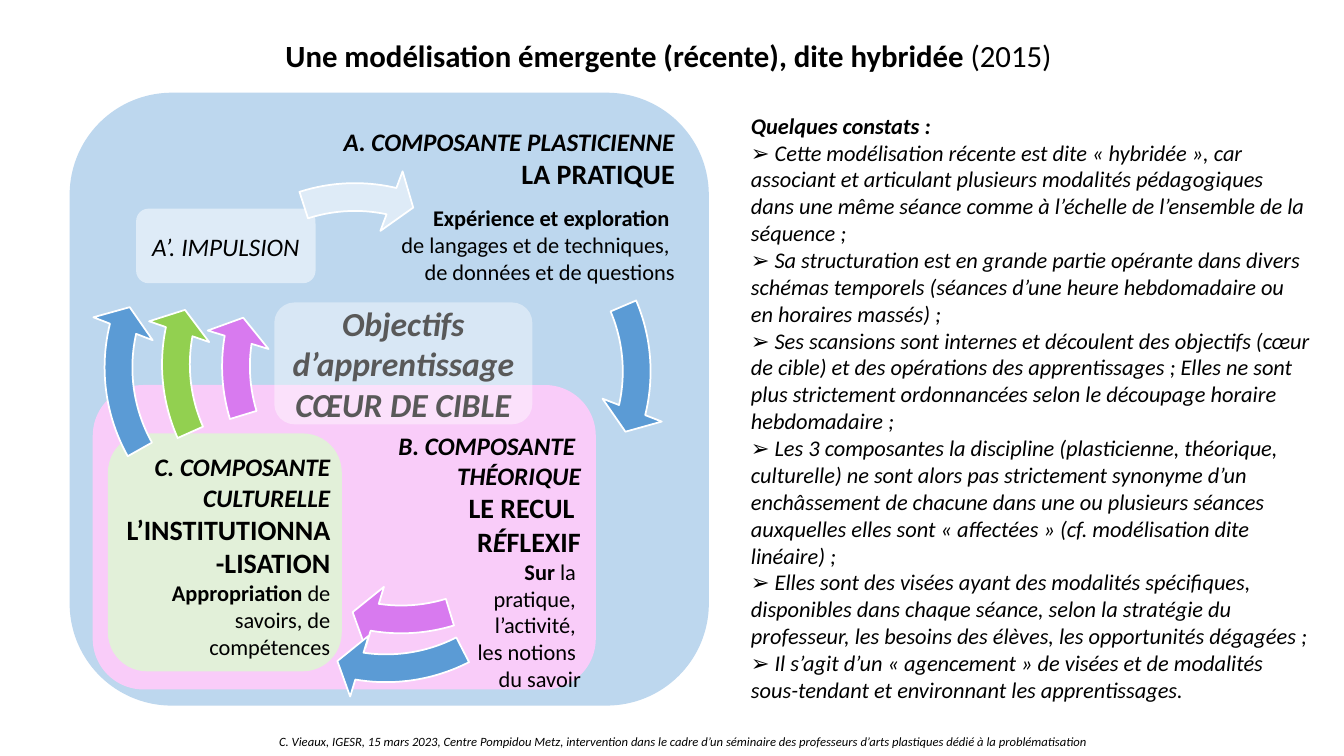
from lxml import etree
from pptx import Presentation
from pptx import util as u
from pptx.dml.color import RGBColor
from pptx.enum import shapes, text
from pptx.oxml import ns

W, H = u.Inches(13.33), u.Inches(7.5)
BLACK = RGBColor(0, 0, 0)
WHITE = RGBColor(255, 255, 255)
GREY = RGBColor(0x59, 0x59, 0x59)
SKY = RGBColor(0xBD, 0xD7, 0xEE)
PALE_BLUE = RGBColor(0xDE, 0xEB, 0xF7)
PALE_PINK = RGBColor(0xF9, 0xCC, 0xF9)
PALE_GREEN = RGBColor(0xE2, 0xF0, 0xD9)
BLUE = RGBColor(0x5B, 0x9B, 0xD5)
VIOLET = RGBColor(0xD8, 0x7A, 0xEF)
GREEN = RGBColor(0x92, 0xD0, 0x50)

RIGHT, CENTER, LEFT = text.PP_ALIGN.RIGHT, text.PP_ALIGN.CENTER, text.PP_ALIGN.LEFT
TOP, MIDDLE, BOTTOM = text.MSO_ANCHOR.TOP, text.MSO_ANCHOR.MIDDLE, text.MSO_ANCHOR.BOTTOM


def font(size, bold=False, italic=False):
    return {"name": "Calibri", "size": u.Pt(size), "bold": bold, "italic": italic}


COMPONENT = font(18, True, True)
ROLE = font(20, True)
KEY = font(16, True)
BODY = font(16)
NOTE = font(16, italic=True)
TARGET = font(24, True, True)

# Each line is a list of (text, format) runs.
PRACTICE = [
    [("A. COMPOSANTE PLASTICIENNE", COMPONENT)],
    [("LA PRATIQUE", ROLE)],
    [("Expérience et exploration ", KEY)],
    [("de langages et de techniques, ", BODY)],
    [("de données et de questions", BODY)],
]
THEORY = [
    [("B. COMPOSANTE ", COMPONENT)],
    [("THÉORIQUE", COMPONENT)],
    [("LE RECUL ", ROLE)],
    [("R", ROLE), ("É", font(20, True, True)), ("FLEXIF", ROLE)],
    [("Sur", KEY), (" la ", BODY)],
    [("pratique, ", BODY)],
    [("l’activité, ", BODY)],
    [("les notions ", BODY)],
    [("du savoir", BODY)],
]
CULTURE = [
    [("C. COMPOSANTE CULTURELLE", COMPONENT)],
    [("L’INSTITUTIONNA-LISATION", ROLE)],
    [("Appropriation ", KEY), ("de savoirs, de compétences", BODY)],
]
FINDINGS = [
    "Cette modélisation récente est dite « hybridée », car associant et articulant "
    "plusieurs modalités pédagogiques dans une même séance comme à l’échelle de "
    "l’ensemble de la séquence ;",
    "Sa structuration est en grande partie opérante dans divers schémas temporels "
    "(séances d’une heure hebdomadaire ou en horaires massés) ;",
    "Ses scansions sont internes et découlent des objectifs (cœur de cible) et des "
    "opérations des apprentissages ; Elles ne sont plus strictement ordonnancées "
    "selon le découpage horaire hebdomadaire ;",
    "Les 3 composantes la discipline (plasticienne, théorique, culturelle) ne sont "
    "alors pas strictement synonyme d’un enchâssement de chacune dans une ou "
    "plusieurs séances auxquelles elles sont « affectées » (cf. modélisation dite "
    "linéaire) ;",
    "Elles sont des visées ayant des modalités spécifiques, disponibles dans chaque "
    "séance, selon la stratégie du professeur, les besoins des élèves, les "
    "opportunités dégagées ;",
    "Il s’agit d’un « agencement » de visées et de modalités sous-tendant et "
    "environnant les apprentissages.",
]

# Left, top (in % of the slide), end and start of the arc, rotation, colour.
ARROWS_BELOW = [(20.18, 22.8, 8.05, 202.15, 0, BLUE)]
ARROWS_ABOVE = [
    (11.63, 21.87, 169.58, 151.32, 0, PALE_BLUE),
    (15.08, 33.47, 59.48, 43.86, 0, VIOLET),
    (13.95, 40, 8.05, 202.15, 85.8, BLUE),
    (10.73, 21.87, 114.78, 93.58, 0, GREEN),
    (6.45, 22.27, 8.05, 198.37, 180, BLUE),
    (15.23, 22.13, 59.48, 43.86, 90, VIOLET),
]


def area(left, top, width, height):
    """Turn percentages of the slide into lengths."""
    return [int(side * share / 100) for side, share in zip((W, H, W, H), (left, top, width, height))]


def write(s, lines, align=LEFT, anchor=TOP, color=BLACK, margins=(0.1, 0.05, 0.1, 0.05)):
    tf = s.text_frame
    tf.word_wrap = True
    tf.auto_size = text.MSO_AUTO_SIZE.NONE
    tf.vertical_anchor = anchor
    for side, inset in zip(("left", "top", "right", "bottom"), margins):
        setattr(tf, f"margin_{side}", u.Inches(inset))
    for i, runs in enumerate(lines):
        p = tf.add_paragraph() if i else tf.paragraphs[0]
        p.alignment = align
        for words, look in runs:
            r = p.add_run()
            r.text = words
            for key, value in look.items():
                setattr(r.font, key, value)
            r.font.color.rgb = color


def add_filled(slide, kind, box, fill):
    s = slide.shapes.add_shape(kind, *area(*box))
    s.shadow.inherit = False
    s.fill.solid()
    s.fill.fore_color.rgb = fill
    s.line.fill.background()
    return s


def add_panel(slide, box, fill, lines, **layout):
    s = add_filled(slide, shapes.MSO_SHAPE.ROUNDED_RECTANGLE, box, fill)
    write(s, lines, **layout)
    return s


def add_arc_arrow(slide, left, top, end, start, rotation, fill):
    s = add_filled(slide, shapes.MSO_SHAPE.CIRCULAR_ARROW, (left, top, 29.56, 52.67), fill)
    for i, value in enumerate((0.07, 4.66, end, start, 0.08)):
        s.adjustments[i] = value
    s.rotation = rotation
    s.line.color.rgb = WHITE
    s.line.width = u.Pt(1.25)


def add_note(slide, box, lines):
    write(slide.shapes.add_textbox(*area(*box)), lines)


def set_opacity(s, percent):
    color = s.element.spPr.find(ns.qn("a:solidFill")).find(ns.qn("a:srgbClr"))
    etree.SubElement(color, ns.qn("a:alpha")).set("val", str(percent * 1000))


def add_title(slide):
    s = slide.shapes.title
    s.left, s.top, s.width, s.height = area(5.18, 4.13, 89.12, 6.27)
    write(s, [[("Une modélisation émergente (récente), dite hybridée ", font(22, True)),
               ("(2015)", font(22))]], align=CENTER)


def add_model(slide):
    slim, none = (0.04,) * 4, (0,) * 4
    practice = add_panel(slide, (5.18, 12.27, 47.56, 81.07), SKY, PRACTICE,
                         align=RIGHT, margins=slim)
    practice.text_frame.paragraphs[2].space_before = u.Pt(10)
    add_panel(slide, (6.9, 50.93, 37.43, 40.27), PALE_PINK, THEORY,
              align=RIGHT, margins=(0, 0.3, 0, 0))
    add_panel(slide, (8.03, 57.33, 17.4, 31.47), PALE_GREEN, CULTURE,
              align=RIGHT, anchor=BOTTOM, margins=none)
    for arrow in ARROWS_BELOW:
        add_arc_arrow(slide, *arrow)
    add_panel(slide, (10.13, 27.6, 13.35, 9.87), PALE_BLUE,
              [[("A’. IMPULSION", font(18, italic=True))]],
              align=CENTER, anchor=MIDDLE, margins=slim)
    for arrow in ARROWS_ABOVE:
        add_arc_arrow(slide, *arrow)
    target = add_panel(slide, (20.41, 40, 19.2, 16.13), WHITE,
                       [[("Objectifs d’apprentissage", TARGET)], [("CŒUR DE CIBLE", TARGET)]],
                       align=CENTER, anchor=MIDDLE, color=GREY)
    set_opacity(target, 41)


def main():
    prs = Presentation()
    prs.slide_width, prs.slide_height = W, H
    slide = prs.slides.add_slide(prs.slide_layouts[5])
    add_model(slide)
    add_title(slide)
    add_note(slide, (55.14, 14.13, 43.14, 80.27),
             [[("Quelques constats :", font(16, True, True))]]
             + [[("➢ " + finding, NOTE)] for finding in FINDINGS])
    add_note(slide, (20.03, 96.4, 65.42, 3.33),
             [[("C. Vieaux, IGESR, 15 mars 2023, Centre Pompidou Metz, intervention dans le cadre "
                "d’un séminaire des professeurs d’arts plastiques dédié à la problématisation",
                font(9, italic=True))]])
    prs.save("out.pptx")


if __name__ == "__main__":
    main()
